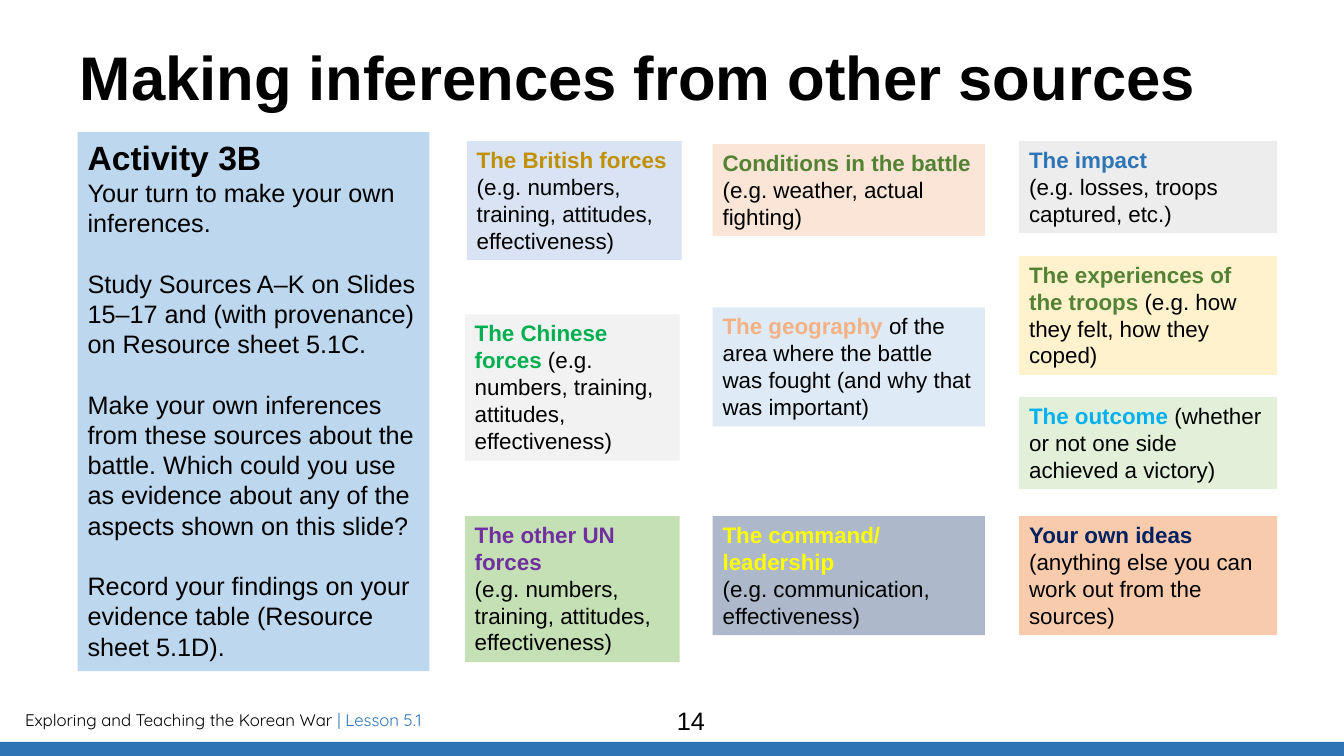
import pptx
import pptx.util
import pptx.dml.color
import pptx.enum.shapes
import pptx.enum.text

Pt = pptx.util.Pt
RGB = pptx.dml.color.RGBColor
ALIGN = pptx.enum.text.PP_ALIGN
ANCHOR = pptx.enum.text.MSO_ANCHOR
FIT = pptx.enum.text.MSO_AUTO_SIZE

BLACK = RGB(0x00, 0x00, 0x00)
BLUE = RGB(0x2E, 0x75, 0xB6)
PALE = RGB(0xBD, 0xD7, 0xEE)
GOLD = RGB(0xBF, 0x90, 0x00)
PURPLE = RGB(0x70, 0x30, 0xA0)
GREEN = RGB(0x00, 0xB0, 0x50)
OLIVE = RGB(0x54, 0x82, 0x35)
YELLOW = RGB(0xFF, 0xFF, 0x00)
SKY = RGB(0x00, 0xB0, 0xF0)
NAVY = RGB(0x00, 0x20, 0x60)
PEACH = RGB(0xF4, 0xB1, 0x83)
LILAC = RGB(0xDA, 0xE3, 0xF3)
LEAF = RGB(0xC5, 0xE0, 0xB4)
CLOUD = RGB(0xF2, 0xF2, 0xF2)
BLUSH = RGB(0xFB, 0xE5, 0xD6)
CREAM = RGB(0xFF, 0xF2, 0xCC)
GREY = RGB(0xED, 0xED, 0xED)
SLATE = RGB(0xAD, 0xB9, 0xCA)
MINT = RGB(0xE2, 0xF0, 0xD9)
CORAL = RGB(0xF8, 0xCB, 0xAD)
ICE = RGB(0xDE, 0xEB, 0xF7)

FORCES, BATTLE, RESULT = (34.58, 15.98), (53.03, 20.25), (75.83, 19.2)
LAST = 68.27

CARDS = [
    ((34.73, 15.98), 18.67, 4, LILAC, GOLD, "The British forces ",
     "(e.g. numbers, training, attitudes, effectiveness)", False),
    (FORCES, 41.6, 5, CLOUD, GREEN, "The Chinese forces ",
     "(e.g. numbers, training, attitudes, effectiveness)", False),
    (FORCES, LAST, 5, LEAF, PURPLE, "The other UN forces",
     "(e.g. numbers, training, attitudes, effectiveness)", True),
    (BATTLE, 19.07, 3, BLUSH, OLIVE, "Conditions in the battle",
     "(e.g. weather, actual fighting)", True),
    (BATTLE, 40.67, 4, ICE, PEACH, "The geography ",
     "of the area where the battle was fought (and why that was important)", False),
    (BATTLE, LAST, 4, SLATE, YELLOW, "The command/ leadership",
     "(e.g. communication, effectiveness)", True),
    (RESULT, 18.67, 3, GREY, BLUE, "The impact",
     "(e.g. losses, troops captured, etc.)", True),
    (RESULT, 33.87, 4, CREAM, OLIVE, "The experiences of the troops ",
     "(e.g. how they felt, how they coped)", False),
    (RESULT, 52.53, 3, MINT, SKY, "The outcome ",
     "(whether or not one side achieved a victory)", False),
    (RESULT, LAST, 4, CORAL, NAVY, "Your own ideas ",
     "(anything else you can work out from the sources)", False),
]

TASKS = [
    "Your turn to make your own inferences.",
    "Study Sources A–K on Slides 15–17 and (with provenance) on Resource sheet 5.1C.",
    "Make your own inferences from these sources about the battle. Which could you "
    "use as evidence about any of the aspects shown on this slide?",
    "Record your findings on your evidence table (Resource sheet 5.1D).",
]


class Page:
    font = "Arial"

    def __init__(self, deck):
        self.col = deck.slide_width / 100
        self.row = deck.slide_height / 100
        self.slide = deck.slides.add_slide(deck.slide_layouts[5])

    def place(self, x, y, w, h):
        return (round(x * self.col), round(y * self.row),
                round(w * self.col), round(h * self.row))

    def run(self, para, text, size, color=BLACK, bold=False, font=None):
        run = para.add_run()
        run.text = text
        run.font.name = font or self.font
        run.font.size = Pt(size)
        run.font.bold = bold
        run.font.color.rgb = color

    def title(self, text, x, y, w, h):
        box = self.slide.shapes.title
        box.left, box.top, box.width, box.height = self.place(x, y, w, h)
        frame = box.text_frame
        frame.margin_left = frame.margin_right = frame.margin_bottom = 0
        frame.margin_top = Pt(6)
        frame.vertical_anchor = ANCHOR.TOP
        frame.auto_size = FIT.NONE
        para = frame.paragraphs[0]
        para.alignment = ALIGN.LEFT
        para.line_spacing = 0.9
        self.run(para, text, 44, bold=True)

    def block(self, x, y, w, h, fill):
        kind = pptx.enum.shapes.MSO_SHAPE.RECTANGLE
        shape = self.slide.shapes.add_shape(kind, *self.place(x, y, w, h))
        shape.shadow.inherit = False
        shape.fill.solid()
        shape.fill.fore_color.rgb = fill
        shape.line.fill.background()
        frame = shape.text_frame
        frame.word_wrap = True
        frame.vertical_anchor = ANCHOR.TOP
        frame.paragraphs[0].alignment = ALIGN.LEFT
        return frame

    def next(self, frame, gap=0):
        para = frame.add_paragraph()
        para.alignment = ALIGN.LEFT
        para.space_before = Pt(gap)
        return para

    def card(self, lane, top, lines, fill, color, head, body, split):
        x, w = lane
        frame = self.block(x, top, w, 1.33 + 3.6 * lines, fill)
        para = frame.paragraphs[0]
        self.run(para, head, 16, color, True)
        if split:
            para = self.next(frame)
        self.run(para, body, 16)

    def panel(self, head, tasks, x, y, w, h):
        frame = self.block(x, y, w, h, PALE)
        self.run(frame.paragraphs[0], head, 24, bold=True)
        for i, task in enumerate(tasks):
            self.run(self.next(frame, 21.6 if i else 0), task, 18)

    def label(self, x, y, w, h, align=ALIGN.LEFT, anchor=ANCHOR.TOP):
        box = self.slide.shapes.add_textbox(*self.place(x, y, w, h))
        frame = box.text_frame
        frame.word_wrap = True
        frame.vertical_anchor = anchor
        para = frame.paragraphs[0]
        para.alignment = align
        return para


def main():
    deck = pptx.Presentation()
    deck.slide_width = pptx.util.Inches(13.33)
    deck.slide_height = pptx.util.Inches(7.5)
    page = Page(deck)

    foot = page.label(1.13, 93.2, 58.65, 4)
    page.run(foot, "Exploring and Teaching the Korean War ", 12, font="Quicksand")
    page.run(foot, "| Lesson 5.1", 12, BLUE, font="Quicksand")
    page.block(0, 98.13, 100, 1.87, BLUE)

    page.title("Making inferences from other sources", 5.93, 5.2, 86.25, 19.33)
    page.panel("Activity 3B", TASKS, 5.78, 17.47, 26.18, 71.33)
    for card in CARDS:
        page.card(*card)

    number = page.label(32.4, 92.67, 38.03, 5.33, ALIGN.CENTER, ANCHOR.MIDDLE)
    page.run(number, "14", 18)
    deck.save("out.pptx")


if __name__ == "__main__":
    main()
